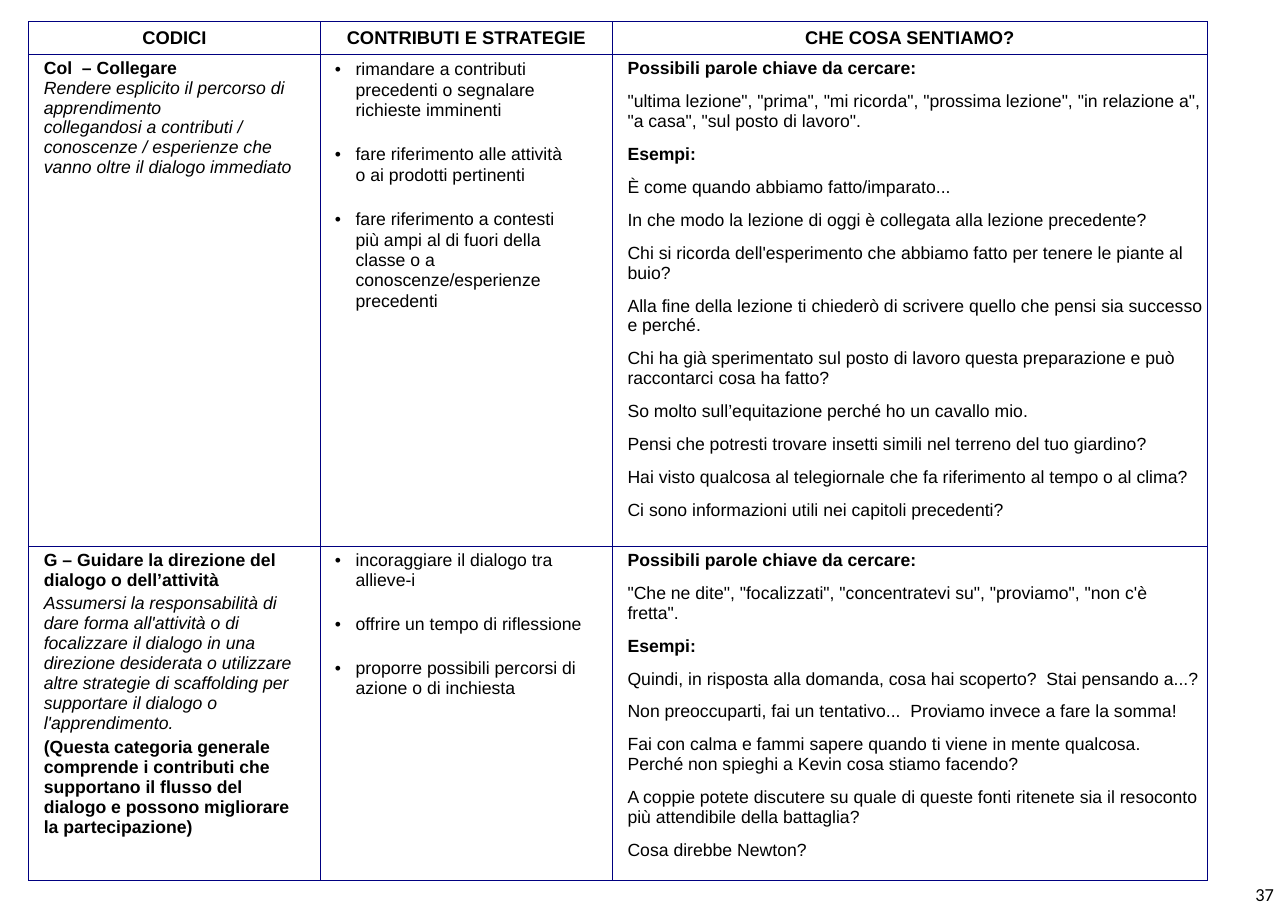
import dataclasses
import pptx
import pptx.dml.color
import pptx.enum.text
import pptx.oxml.ns
import pptx.util
import lxml.etree

Cm = pptx.util.Cm
Pt = pptx.util.Pt
Align = pptx.enum.text.PP_ALIGN
Anchor = pptx.enum.text.MSO_ANCHOR


@dataclasses.dataclass(frozen=True)
class Theme:
    ink: str = "000000"
    rule: str = "000080"
    font: str = "Arial"
    folio: str = "Calibri"
    head: float = 12
    body: float = 11.5
    line: float = 0.75


@dataclasses.dataclass(frozen=True)
class Para:
    text: str
    bold: bool = False
    slant: bool = False
    gap: float = 0
    lead: float = 1.0
    right: float = 0
    dot: bool = False


THEME = Theme()
COLS = [6.73, 6.73, 13.72]
ROWS = [0.76, 11.33, 7.7]
HEADS = ["CODICI", "CONTRIBUTI E STRATEGIE", "CHE COSA SENTIAMO?"]


def talk(words, lines, right=0):
    texts = ["Possibili parole chiave da cercare:", words, "Esempi:", *lines]
    return [Para(text, bold=i in (0, 2), gap=8.7 if i else 0, right=right)
            for i, text in enumerate(texts)]


def points(texts, gap, lead=1.0, right=0):
    return [Para(text, gap=gap if i else 0, lead=lead, right=right, dot=True)
            for i, text in enumerate(texts)]


LINK = [
    [
        Para("Col  – Collegare", bold=True, right=0.25),
        Para("Rendere esplicito il percorso di apprendimento", slant=True, right=0.25),
        Para("collegandosi a contributi / conoscenze / esperienze che vanno oltre "
             "il dialogo immediato", slant=True, right=0.25),
    ],
    points([
        "rimandare a contributi precedenti o segnalare richieste imminenti",
        "fare riferimento alle attività o ai prodotti pertinenti",
        "fare riferimento a contesti più ampi al di fuori della classe o a "
        "conoscenze/esperienze precedenti",
    ], 15.6, 1.04, 0.81),
    talk('"ultima lezione", "prima", "mi ricorda", "prossima lezione", '
         '"in relazione a", "a casa", "sul posto di lavoro".', [
             "È come quando abbiamo fatto/imparato...",
             "In che modo la lezione di oggi è collegata alla lezione precedente?",
             "Chi si ricorda dell'esperimento che abbiamo fatto per tenere le piante al buio?",
             "Alla fine della lezione ti chiederò di scrivere quello che pensi sia "
             "successo e perché.",
             "Chi ha già sperimentato sul posto di lavoro questa preparazione e può "
             "raccontarci cosa ha fatto?",
             "So molto sull’equitazione perché ho un cavallo mio.",
             "Pensi che potresti trovare insetti simili nel terreno del tuo giardino?",
             "Hai visto qualcosa al telegiornale che fa riferimento al tempo o al clima?",
             "Ci sono informazioni utili nei capitoli precedenti?",
         ]),
]

GUIDE = [
    [
        Para("G – Guidare la direzione del dialogo o dell’attività",
             bold=True, lead=1.01, right=0.25),
        Para("Assumersi la responsabilità di dare forma all'attività o di focalizzare "
             "il dialogo in una direzione desiderata o utilizzare altre strategie di "
             "scaffolding per supportare il dialogo o l'apprendimento.",
             slant=True, gap=1.9, lead=1.02, right=0.25),
        Para("(Questa categoria generale comprende i contributi che supportano il "
             "flusso del dialogo e possono migliorare la partecipazione)",
             bold=True, gap=2.8, lead=1.01, right=0.25),
    ],
    points([
        "incoraggiare il dialogo tra allieve-i",
        "offrire un tempo di riflessione",
        "proporre possibili percorsi di azione o di inchiesta",
    ], 16.1),
    talk('"Che ne dite", "focalizzati", "concentratevi su", "proviamo", "non c\'è fretta".', [
        "Quindi, in risposta alla domanda, cosa hai scoperto?  Stai pensando a...?",
        "Non preoccuparti, fai un tentativo...  Proviamo invece a fare la somma!",
        "Fai con calma e fammi sapere quando ti viene in mente qualcosa.  "
        "Perché non spieghi a Kevin cosa stiamo facendo?",
        "A coppie potete discutere su quale di queste fonti ritenete sia il "
        "resoconto più attendibile della battaglia?",
        "Cosa direbbe Newton?",
    ], 0.05),
]


def add(root, tag, **attrs):
    return lxml.etree.SubElement(root, pptx.oxml.ns.qn(tag), **attrs)


def tint(root, tag, color):
    add(add(root, tag), "a:srgbClr", val=color)


def style(para, font, size, bold=False, slant=False):
    for run in para.runs:
        run.font.name = font
        run.font.size = Pt(size)
        run.font.bold = bold
        run.font.italic = slant
        run.font.color.rgb = pptx.dml.color.RGBColor.from_string(THEME.ink)


def frame(cell):
    cell.margin_left = cell.margin_right = Cm(0.1)
    cell.margin_top = cell.margin_bottom = Cm(0.1)
    props = cell._tc.get_or_add_tcPr()
    for side in "LRTB":
        line = add(props, f"a:ln{side}", w=str(Pt(THEME.line)))
        tint(line, "a:solidFill", THEME.rule)
    cell.fill.background()


def indent(para, item):
    props = para._p.get_or_add_pPr()
    props.set("marL", str(Cm(0.71 if item.dot else 0.25)))
    props.set("indent", str(Cm(-0.48 if item.dot else 0)))
    props.set("marR", str(Cm(item.right)))
    if item.dot:
        tint(props, "a:buClr", THEME.ink)
        add(props, "a:buFont", typeface=THEME.font)
        add(props, "a:buChar", char="•")


def title(cell, text):
    frame(cell)
    cell.vertical_anchor = Anchor.MIDDLE
    para = cell.text_frame.paragraphs[0]
    para.text = text
    para.alignment = Align.CENTER
    style(para, THEME.font, THEME.head, True)


def fill(cell, items):
    frame(cell)
    cell.vertical_anchor = Anchor.TOP
    cell.text_frame.text = "\n".join(item.text for item in items)
    for para, item in zip(cell.text_frame.paragraphs, items):
        para.line_spacing = item.lead
        para.space_before = Pt(item.gap)
        indent(para, item)
        style(para, THEME.font, THEME.body, item.bold, item.slant)


def grid(slide):
    table = slide.shapes.add_table(len(ROWS), len(COLS), Cm(0.66), Cm(0.5),
                                   Cm(sum(COLS)), Cm(sum(ROWS))).table
    table.first_row = table.horz_banding = False
    for col, width in zip(table.columns, COLS):
        col.width = Cm(width)
    for row, height in zip(table.rows, ROWS):
        row.height = Cm(height)
    for c, text in enumerate(HEADS):
        title(table.cell(0, c), text)
    for r, cells in enumerate([LINK, GUIDE], 1):
        for c, items in enumerate(cells):
            fill(table.cell(r, c), items)


def folio(slide, text):
    box = slide.shapes.add_textbox(Cm(28.7), Cm(20.24), Cm(0.94), Cm(0.76))
    box.text_frame.word_wrap = False
    box.text_frame.text = text
    style(box.text_frame.paragraphs[0], THEME.folio, THEME.head)


def main():
    deck = pptx.Presentation()
    deck.slide_width = Cm(29.7)
    deck.slide_height = Cm(21)
    slide = deck.slides.add_slide(deck.slide_layouts[6])
    grid(slide)
    folio(slide, "37")
    deck.save("out.pptx")


if __name__ == "__main__":
    main()
